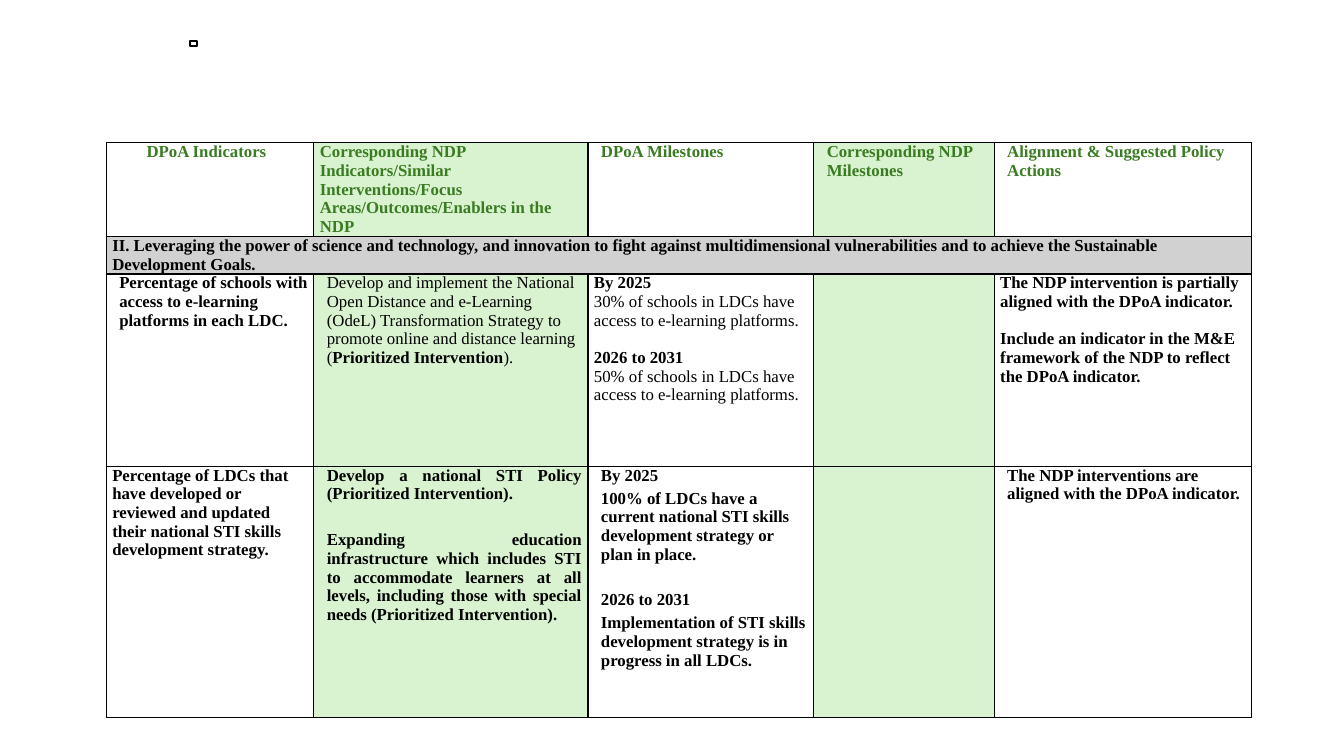
from lxml import etree
from pptx import Presentation
from pptx.dml.color import RGBColor
from pptx.enum.shapes import MSO_SHAPE
from pptx.enum.text import PP_ALIGN
from pptx.oxml.ns import qn
from pptx.util import Pt

RECTANGLE = MSO_SHAPE.RECTANGLE
LEFT = PP_ALIGN.LEFT
JUSTIFY = PP_ALIGN.JUSTIFY

FONT = "Times New Roman"
BLACK, GREEN = "000000", "3A7C22"
PALE_GREEN, GREY = "D9F2D0", "D1D1D1"
INDENT = 5
COLUMN_WIDTHS = [148.3, 195.8, 161.3, 128.9, 183.6]
ROW_HEIGHTS = [67, 23, 137.5, 179.3]
NDP_COLUMNS = (1, 3)

HEADERS = [
    ("DPoA Indicators", 24.5),
    ("Corresponding NDP Indicators/Similar Interventions/Focus "
     "Areas/Outcomes/Enablers in the NDP", 0),
    ("DPoA Milestones", INDENT),
    ("Corresponding NDP Milestones", INDENT),
    ("Alignment & Suggested Policy Actions", INDENT),
]
SECTION = ("II. Leveraging the power of science and technology, and innovation to fight "
           "against multidimensional vulnerabilities and to achieve the Sustainable "
           "Development Goals.")

# Each entry: row, column, indent, alignment, (space before, text); asterisks enclose bold.
BODY = [
    (2, 0, INDENT, LEFT, [
        (0, "*Percentage of schools with access to e-learning platforms in each LDC.*")]),
    (2, 1, INDENT, LEFT, [
        (0, "Develop and implement the National Open Distance and e-Learning (OdeL) "
            "Transformation Strategy to promote online and distance learning "
            "(*Prioritized Intervention*).")]),
    (2, 2, 0, LEFT, [
        (0, "*By 2025*"),
        (0, "30% of schools in LDCs have access to e-learning platforms."),
        (13.4, "*2026 to 2031*"),
        (0, "50% of schools in LDCs have access to e-learning platforms.")]),
    (2, 4, 0, LEFT, [
        (0, "*The NDP intervention is partially aligned with the DPoA indicator.*"),
        (13.4, "*Include an indicator in the M&E framework of the NDP to reflect "
               "the DPoA indicator.*")]),
    (3, 0, 0, LEFT, [
        (0, "*Percentage of LDCs that have developed or reviewed and updated their "
            "national STI skills development strategy.*")]),
    (3, 1, INDENT, JUSTIFY, [
        (0, "*Develop a national STI Policy (Prioritized Intervention).*"),
        (19.4, "*Expanding education infrastructure which includes STI to accommodate "
               "learners at all levels, including those with special needs "
               "(Prioritized Intervention).*")]),
    (3, 2, INDENT, LEFT, [
        (0, "*By 2025*"),
        (3, "*100% of LDCs have a current national STI skills development strategy "
            "or plan in place.*"),
        (19.4, "*2026 to 2031*"),
        (3, "*Implementation of STI skills development strategy is in progress "
            "in all LDCs.*")]),
    (3, 4, INDENT, LEFT, [
        (0, "*The NDP interventions are aligned with the DPoA indicator.*")]),
]


def rgb(value):
    """Return the colour for a hex string."""
    return RGBColor.from_string(value)


def style_cell(cell, fill):
    """Give a cell its margins, black borders and fill."""
    cell.margin_left = cell.margin_right = Pt(4.3)
    cell.margin_top = cell.margin_bottom = Pt(0)
    properties = cell._tc.get_or_add_tcPr()
    for side in ("lnL", "lnR", "lnT", "lnB"):
        border = etree.SubElement(properties, qn(f"a:{side}"), w=str(Pt(1)))
        solid = etree.SubElement(border, qn("a:solidFill"))
        etree.SubElement(solid, qn("a:srgbClr"), val=BLACK)
    if fill:
        cell.fill.solid()
        cell.fill.fore_color.rgb = rgb(fill)
    else:
        cell.fill.background()


def write_cell(cell, lines, indent=0, alignment=LEFT, color=BLACK):
    """Write paragraphs whose bold parts stand between asterisks."""
    for index, (space, text) in enumerate(lines):
        frame = cell.text_frame
        paragraph = frame.add_paragraph() if index else frame.paragraphs[0]
        paragraph.alignment = alignment
        paragraph.space_before = Pt(space)
        paragraph._p.get_or_add_pPr().set("marL", str(Pt(indent)))
        for position, part in enumerate(text.split("*")):
            if part:
                run = paragraph.add_run()
                run.text = part
                run.font.name = FONT
                run.font.size = Pt(12)
                run.font.bold = position % 2 == 1
                run.font.color.rgb = rgb(color)


def add_alignment_table(slide):
    """Add the table that compares DPoA and NDP indicators."""
    table = slide.shapes.add_table(
        len(ROW_HEIGHTS), len(COLUMN_WIDTHS), Pt(75.9), Pt(102),
        Pt(sum(COLUMN_WIDTHS)), Pt(sum(ROW_HEIGHTS))).table
    table.first_row = table.horz_banding = False
    for column, width in zip(table.columns, COLUMN_WIDTHS):
        column.width = Pt(width)
    for index, height in enumerate(ROW_HEIGHTS):
        table.rows[index].height = Pt(height)
        for column in range(len(COLUMN_WIDTHS)):
            fill = PALE_GREEN if column in NDP_COLUMNS else None
            style_cell(table.cell(index, column), GREY if index == 1 else fill)
    table.cell(1, 0).merge(table.cell(1, len(COLUMN_WIDTHS) - 1))

    for column, (header, indent) in enumerate(HEADERS):
        write_cell(table.cell(0, column), [(0, f"*{header}*")], indent, color=GREEN)
    write_cell(table.cell(1, 0), [(0, f"*{SECTION}*")])
    for row, column, indent, alignment, lines in BODY:
        write_cell(table.cell(row, column), lines, indent, alignment)


def add_marker(slide):
    """Add the small outlined rectangle above the table."""
    marker = slide.shapes.add_shape(RECTANGLE, Pt(136), Pt(29.5), Pt(5), Pt(3.6))
    marker.shadow.inherit = False
    marker.fill.background()
    marker.line.color.rgb = rgb(BLACK)
    marker.line.width = Pt(1.42)


def main():
    """Build and save the slide."""
    presentation = Presentation()
    presentation.slide_width = Pt(960)
    presentation.slide_height = Pt(540)
    slide = presentation.slides.add_slide(presentation.slide_layouts[6])
    add_alignment_table(slide)
    add_marker(slide)
    presentation.save("out.pptx")


if __name__ == "__main__":
    main()
